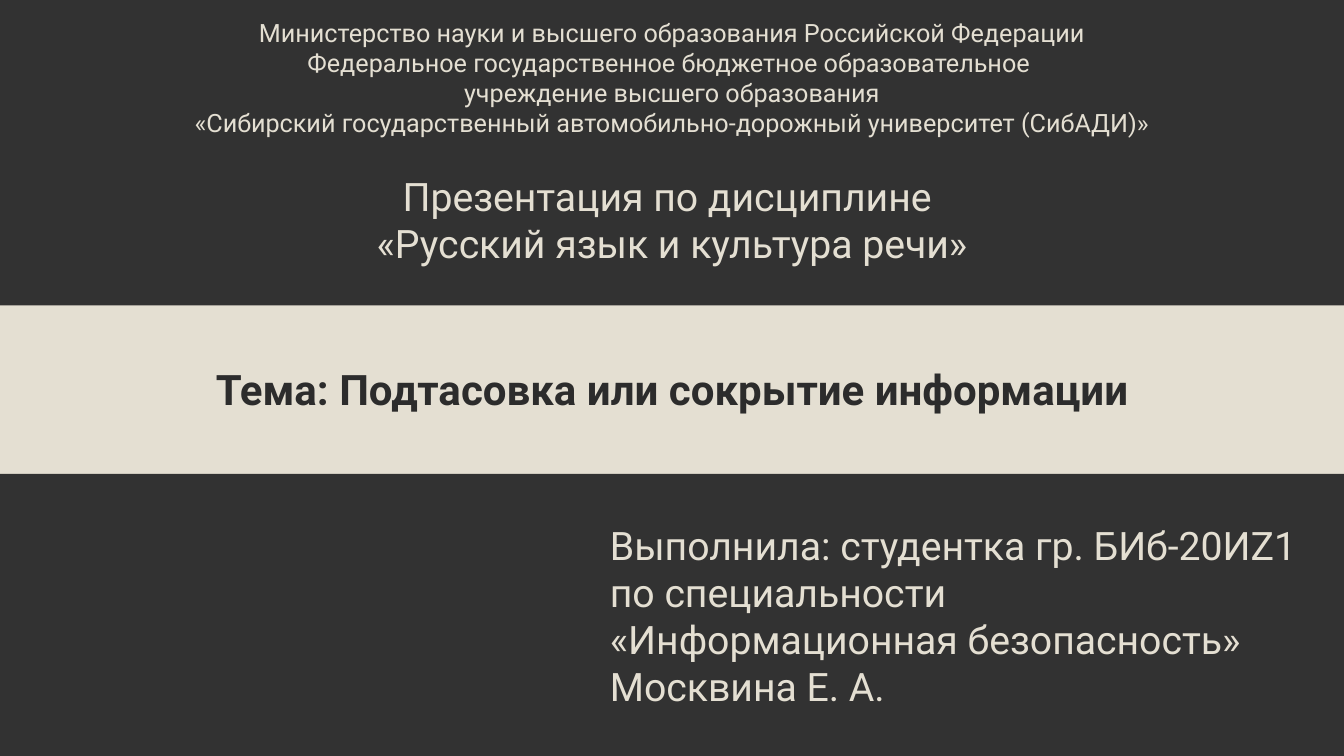
from pptx import Presentation
from pptx.dml.color import RGBColor
from pptx.enum.shapes import MSO_SHAPE
from pptx.enum.text import MSO_ANCHOR, MSO_AUTO_SIZE, PP_ALIGN
from pptx.util import Inches, Pt

RECT = MSO_SHAPE.RECTANGLE
TOP = MSO_ANCHOR.TOP
GROW = MSO_AUTO_SIZE.SHAPE_TO_FIT_TEXT
LEFT, CENTER = PP_ALIGN.LEFT, PP_ALIGN.CENTER

SAND = RGBColor(0xE4, 0xDF, 0xD2)
CHARCOAL = RGBColor(0x32, 0x32, 0x32)
INK = RGBColor(0x2C, 0x2C, 0x2C)

FONT = "Roboto"
TITLE_ONLY = 5


class Cover:
    """A title slide; every box is (left, top, width, height) in percent of the slide."""

    def __init__(self, prs):
        self.width, self.height = prs.slide_width, prs.slide_height
        self.s = prs.slides.add_slide(prs.slide_layouts[TITLE_ONLY])
        fill = self.s.background.fill
        fill.solid()
        fill.fore_color.rgb = SAND

    def place(self, box):
        sides = (self.width, self.height) * 2
        return [round(side * share / 100) for side, share in zip(sides, box)]

    def band(self, top, height):
        sp = self.s.shapes.add_shape(RECT, *self.place((0, top, 100, height)))
        sp.shadow.inherit = False
        sp.fill.solid()
        sp.fill.fore_color.rgb = CHARCOAL
        sp.line.fill.background()

    def title(self, box, text, size):
        sp = self.s.shapes.title
        sp.left, sp.top, sp.width, sp.height = self.place(box)
        self.set_lines(sp.text_frame, [text], size, INK, CENTER, wrap=False, bold=True)

    def text(self, box, lines, size, align=CENTER, wrap=True):
        sp = self.s.shapes.add_textbox(*self.place(box))
        self.set_lines(sp.text_frame, lines, size, SAND, align, wrap)

    def set_lines(self, tf, lines, size, color, align, wrap, bold=False):
        tf.text = "\n".join(lines)
        tf.word_wrap = wrap
        tf.auto_size = GROW
        tf.vertical_anchor = TOP
        for p in tf.paragraphs:
            p.alignment = align
            for r in p.runs:
                r.font.name = FONT
                r.font.size = Pt(size)
                r.font.bold = bold
                r.font.color.rgb = color


def main():
    prs = Presentation()
    prs.slide_width, prs.slide_height = Inches(13.33), Inches(7.5)

    cover = Cover(prs)
    cover.band(62.67, 37.33)
    cover.band(0, 40.4)
    cover.text((0, 22.13, 100, 13.87), [
        "Презентация по дисциплине ",
        "«Русский язык и культура речи»",
    ], 28)
    cover.title((14.7, 47.47, 70.67, 8.13),
                "Тема: Подтасовка или сокрытие информации", 30)
    cover.text((44.64, 68.27, 53.94, 26.53), [
        "Выполнила: студентка гр. БИб-20ИZ1",
        "по специальности",
        "«Информационная безопасность»",
        "Москвина Е. А.",
    ], 28, LEFT, wrap=False)
    cover.text((0, 1.6, 100, 17.47), [
        "Министерство науки и высшего образования Российской Федерации",
        "Федеральное государственное бюджетное образовательное ",
        "учреждение высшего образования",
        "«Сибирский государственный автомобильно-дорожный университет (СибАДИ)»",
    ], 18)

    prs.save("out.pptx")


if __name__ == "__main__":
    main()
